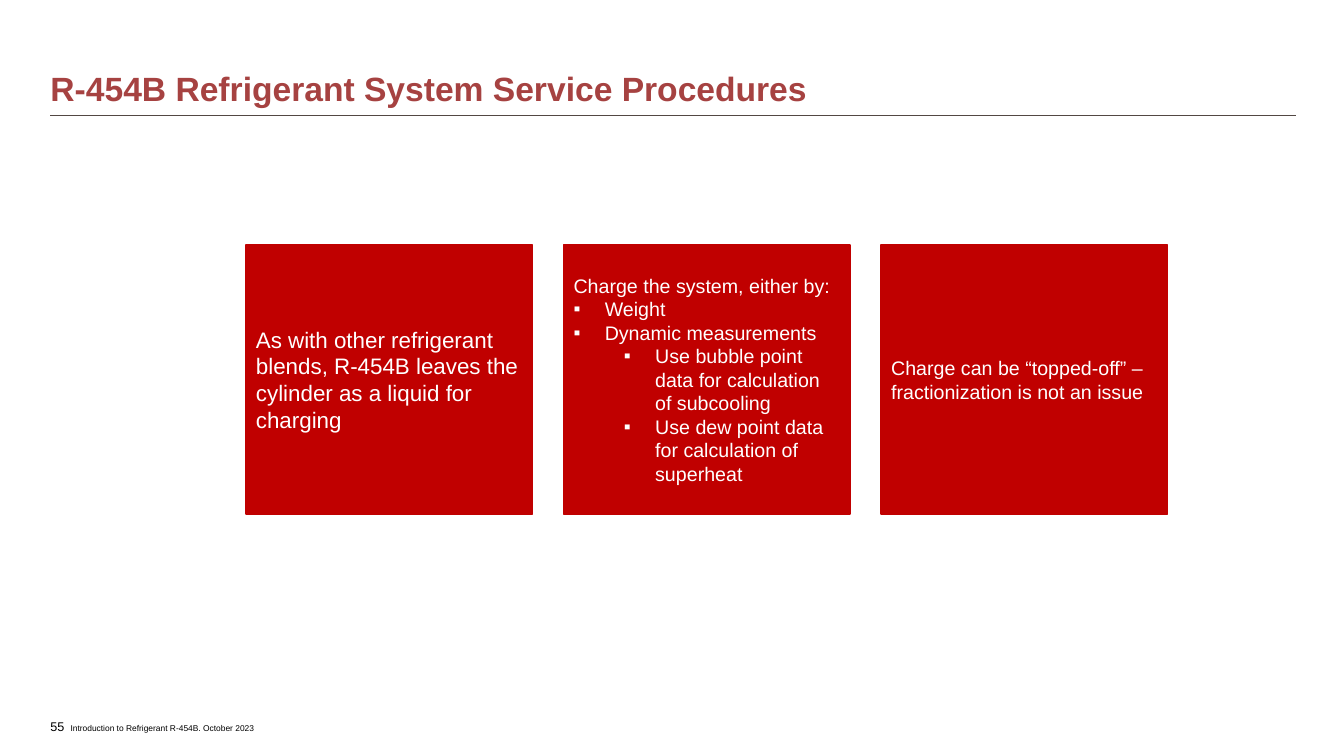
from lxml import etree
from pptx import Presentation
from pptx import util as u
from pptx.dml.color import RGBColor
from pptx.enum import shapes, text
from pptx.oxml.ns import qn

COLORS = {"title": "A64241", "card": "C00000", "card_text": "FFFFFF",
          "rule": "524743", "footer": "000000"}
FONT = "Arial"

CARDS = [
    (16, [("As with other refrigerant blends, R-454B leaves the cylinder as a liquid for charging", None)]),
    (14, [("Charge the system, either by:", None),
          ("Weight", 0),
          ("Dynamic measurements", 0),
          ("Use bubble point data for calculation of subcooling", 1),
          ("Use dew point data for calculation of superheat", 1)]),
    (14, [("Charge can be “topped-off” – fractionization is not an issue", None)]),
]


class SlideBuilder:
    """Draws styled elements on one slide."""

    def __init__(self, page):
        self.page = page

    def color(self, name):
        return RGBColor.from_string(COLORS[name])

    def style(self, para, size, color, bold=False):
        para.font.name = FONT
        para.font.size = u.Pt(size)
        para.font.bold = bold
        para.font.color.rgb = self.color(color)

    def bullet(self, para, level):
        para.level = level
        props = para._p.get_or_add_pPr()
        props.set("marL", str(u.Inches(0.31 + 0.5 * level)))
        props.set("indent", str(u.Inches(-0.31)))
        etree.SubElement(props, qn("a:buFont"), typeface=FONT)
        etree.SubElement(props, qn("a:buChar"), char="▪")

    def label(self, words, left, top, width, height, size, color,
              anchor=text.MSO_ANCHOR.TOP, bold=False, spacing=None):
        box = self.page.shapes.add_textbox(*map(u.Inches, (left, top, width, height)))
        frame = box.text_frame
        frame.word_wrap = True
        frame.vertical_anchor = anchor
        frame.margin_left = frame.margin_right = frame.margin_top = frame.margin_bottom = 0
        para = frame.paragraphs[0]
        para.text = words
        para.line_spacing = spacing
        self.style(para, size, color, bold)

    def rule(self, left, right, top):
        line = self.page.shapes.add_connector(
            shapes.MSO_CONNECTOR.STRAIGHT, *map(u.Inches, (left, top, right, top)))
        line.line.color.rgb = self.color("rule")
        line.line.width = u.Pt(0.75)
        etree.SubElement(line._element.spPr, qn("a:effectLst"))

    def card(self, left, top, width, height, size, lines):
        card = self.page.shapes.add_shape(
            shapes.MSO_SHAPE.RECTANGLE, *map(u.Inches, (left, top, width, height)))
        card.shadow.inherit = False
        card.fill.solid()
        card.fill.fore_color.rgb = self.color("card")
        card.line.color.rgb = self.color("card")
        card.line.width = u.Pt(1)
        frame = card.text_frame
        frame.word_wrap = True
        frame.vertical_anchor = text.MSO_ANCHOR.MIDDLE
        for index, (words, level) in enumerate(lines):
            para = frame.add_paragraph() if index else frame.paragraphs[0]
            para.text = words
            para.alignment = text.PP_ALIGN.LEFT
            if level is not None:
                self.bullet(para, level)
            self.style(para, size, "card_text")


def main():
    deck = Presentation()
    deck.slide_width, deck.slide_height = u.Inches(13.33), u.Inches(7.5)
    builder = SlideBuilder(deck.slides.add_slide(deck.slide_layouts[6]))
    builder.rule(0.5, 12.85, 1.15)
    builder.label("55", 0.5, 7.09, 0.39, 0.24, 9, "footer", text.MSO_ANCHOR.MIDDLE)
    builder.label("Introduction to Refrigerant R-454B. October 2023",
                  0.7, 7.17, 2.2, 0.1, 6, "footer")
    builder.label("R-454B Refrigerant System Service Procedures",
                  0.5, 0.21, 12.35, 0.87, 24, "title",
                  text.MSO_ANCHOR.BOTTOM, bold=True, spacing=0.9)
    for column, (size, lines) in enumerate(CARDS):
        builder.card(2.44 + 3.15 * column, 2.43, 2.84, 2.67, size, lines)
    deck.save("out.pptx")


if __name__ == "__main__":
    main()
